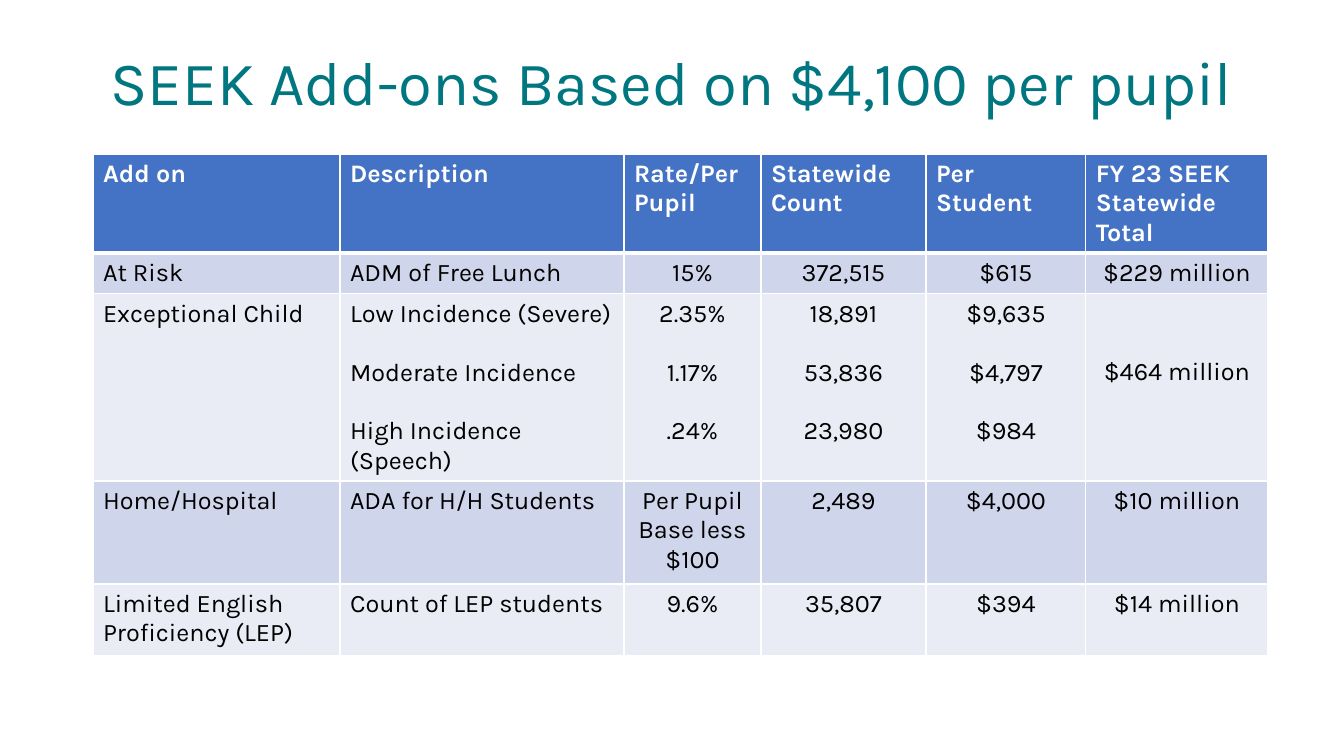
from dataclasses import dataclass
from lxml.etree import SubElement as Sub
from pptx import Presentation
from pptx.dml.color import RGBColor as Color
from pptx.enum.text import MSO_ANCHOR as Anchor, MSO_AUTO_SIZE as Fit, PP_ALIGN as Align
from pptx.oxml.ns import qn
from pptx.util import Emu, Pt

SCALE = 914400 / 100.8


@dataclass(frozen=True)
class Theme:
    font: str = "Karla"
    teal: str = "007780"
    blue: str = "4472C4"
    dark: str = "CFD5EA"
    light: str = "E9EBF5"
    white: str = "FFFFFF"
    black: str = "000000"
    head: int = 44
    body: int = 18
    gap: int = 21
    thin: int = 1
    thick: int = 3


THEME = Theme()
WIDTHS = [247, 284, 137, 165, 160, 182]
HEIGHTS = [72, 41, 182, 103, 72]
LEFT_COLS = 2
TOTAL_DROP = 64
ROWS = [
    ["Add on", "Description", "Rate/Per Pupil", "Statewide Count", "Per Student",
     "FY 23 SEEK Statewide Total"],
    ["At Risk", "ADM of Free Lunch", "15%", "372,515", "$615", "$229 million"],
    ["Exceptional Child",
     "Low Incidence (Severe)\nModerate Incidence\nHigh Incidence (Speech)",
     "2.35%\n1.17%\n.24%", "18,891\n53,836\n23,980", "$9,635\n$4,797\n$984",
     "$464 million"],
    ["Home/Hospital", "ADA for H/H Students", "Per Pupil Base less $100", "2,489",
     "$4,000", "$10 million"],
    ["Limited English Proficiency (LEP)", "Count of LEP students", "9.6%", "35,807",
     "$394", "$14 million"],
]


def px(count):
    return Emu(round(count * SCALE))


def style(para, size, color, bold, align):
    para.alignment = align
    for run in para.runs:
        run.font.name = THEME.font
        run.font.size = Pt(size)
        run.font.bold = bold
        run.font.color.rgb = Color.from_string(color)


def edge(cell, side, width):
    props = cell._tc.get_or_add_tcPr()
    line = Sub(props, qn("a:ln" + side), w=str(Pt(width)))
    fill = Sub(line, qn("a:solidFill"))
    Sub(fill, qn("a:srgbClr"), val=THEME.white)


def fill_cell(cell, text, row, col):
    for side in "LRTB":
        rule = (row, side) in [(0, "B"), (1, "T")]
        edge(cell, side, THEME.thick if rule else THEME.thin)
    head = row == 0
    shade = THEME.blue if head else THEME.dark if row % 2 else THEME.light
    cell.fill.solid()
    cell.fill.fore_color.rgb = Color.from_string(shade)
    cell.text_frame.text = text
    align = Align.LEFT if head or col < LEFT_COLS else Align.CENTER
    color = THEME.white if head else THEME.black
    for index, para in enumerate(cell.text_frame.paragraphs):
        style(para, THEME.body, color, head, align)
        if index:
            para.space_before = Pt(THEME.gap)


def add_title(slide, box, text):
    title = slide.shapes.title
    title.left, title.top, title.width, title.height = map(px, box)
    frame = title.text_frame
    frame.text = text
    frame.word_wrap = True
    frame.auto_size = Fit.NONE
    frame.vertical_anchor = Anchor.MIDDLE
    para = frame.paragraphs[0]
    para.line_spacing = 0.9
    style(para, THEME.head, THEME.teal, False, Align.CENTER)


def add_grid(slide, box):
    table = slide.shapes.add_table(len(ROWS), len(WIDTHS), *map(px, box)).table
    table.horz_banding = False
    for col, width in zip(table.columns, WIDTHS):
        col.width = px(width)
    for row, height in zip(table.rows, HEIGHTS):
        row.height = px(height)
    for row, texts in enumerate(ROWS):
        for col, text in enumerate(texts):
            fill_cell(table.cell(row, col), text, row, col)
    table.cell(2, 5).margin_top = px(TOTAL_DROP)


def main():
    deck = Presentation()
    deck.slide_width, deck.slide_height = px(1344), px(756)
    slide = deck.slides.add_slide(deck.slide_layouts[5])
    add_title(slide, (93, 40, 1159, 92), "SEEK Add-ons Based on $4,100 per pupil")
    add_grid(slide, (93, 154, sum(WIDTHS), sum(HEIGHTS)))
    deck.save("out.pptx")


if __name__ == "__main__":
    main()
